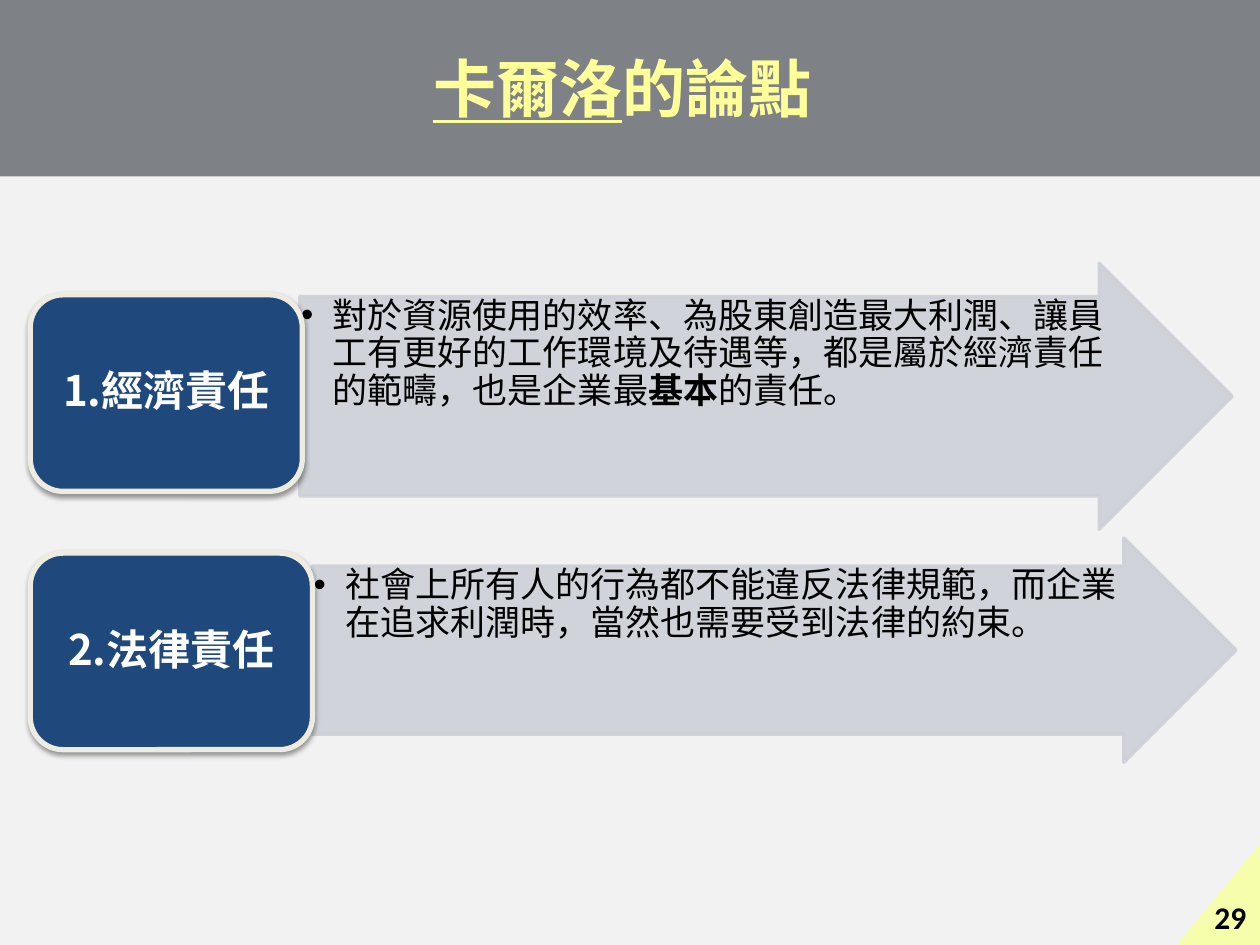
from dataclasses import dataclass

from lxml import etree
from pptx import Presentation
from pptx import util as u
from pptx.dml.color import RGBColor
from pptx.enum import shapes, text
from pptx.oxml import ns


@dataclass(frozen=True)
class Theme:
    """Colours, fonts and type sizes."""

    paper: str = "F2F2F2"
    banner: str = "0C141C"
    heading: str = "FFFF99"
    arrow: str = "CDD0D7"
    label: str = "1F497D"
    edge: str = "EEECE1"
    corner: str = "F6FEAC"
    ink: str = "000000"
    light: str = "FFFFFF"
    face: str = "Noto Sans CJK SC"
    number_face: str = "Calibri"
    title_size: int = 36
    label_size: int = 24
    body_size: int = 20
    number_size: int = 18


def child(parent, tag, **attributes):
    """Append a DrawingML element to its parent."""
    return etree.SubElement(parent, ns.qn(tag), attributes)


class SlideMaker:
    """Draws styled elements on the current slide."""

    def __init__(self, page, theme):
        self.page = page
        self.theme = theme
        page.background.fill.solid()
        page.background.fill.fore_color.rgb = RGBColor.from_string(theme.paper)

    def shape(self, kind, frame, fill, line=None, width=0, opacity=100):
        """Add a flat preset shape."""
        box = self.page.shapes.add_shape(kind, *map(u.Inches, frame))
        box.shadow.inherit = False
        box.fill.solid()
        box.fill.fore_color.rgb = RGBColor.from_string(fill)
        if line:
            box.line.color.rgb = RGBColor.from_string(line)
            box.line.width = u.Pt(width)
        else:
            box.line.fill.background()
        if opacity < 100:
            for colour in box.element.spPr.iter(ns.qn("a:srgbClr")):
                child(colour, "a:alpha", val=str(opacity * 1000))
        return box

    def words(self, box, spans, size, colour, face, bold=False, align=None, spacing=None):
        """Fill a box with one paragraph of (wording, emphasis) spans."""
        para = box.text_frame.paragraphs[0]
        para.alignment = align
        para.line_spacing = spacing
        font = para.font
        font.name, font.size, font.bold = face, u.Pt(size), bold
        font.color.rgb = RGBColor.from_string(colour)
        child(para._p.pPr.find(ns.qn("a:defRPr")), "a:ea", typeface=face)
        for wording, emphasis in spans:
            span = para.add_run()
            span.text = wording
            if emphasis == "bold":
                span.font.bold = True
            elif emphasis == "underline":
                span.font.underline = True
        return para

    def place(self, holder, frame, margins, anchor):
        """Move a placeholder to its frame, in front of what is drawn so far."""
        holder.left, holder.top, holder.width, holder.height = map(u.Inches, frame)
        frame_text = holder.text_frame
        frame_text.word_wrap = True
        frame_text.auto_size = text.MSO_AUTO_SIZE.NONE
        frame_text.vertical_anchor = anchor
        frame_text.margin_left = frame_text.margin_right = u.Inches(margins[0])
        frame_text.margin_top = frame_text.margin_bottom = u.Inches(margins[1])
        self.page.shapes._spTree.append(holder.element)

    def title(self, spans):
        """Set the title over its banner."""
        theme = self.theme
        self.shape(shapes.MSO_SHAPE.RECTANGLE, (0, 0, 10, 1.4), theme.banner, opacity=50)
        holder = self.page.shapes.title
        self.place(holder, (0.51, 0.17, 8.86, 0.87), (0.08, 0.04), text.MSO_ANCHOR.BOTTOM)
        self.words(holder, spans, theme.title_size, theme.heading, theme.face,
                   True, text.PP_ALIGN.CENTER, 0.9)

    def arrow(self, holder, frame, spans):
        """Draw a right arrow carrying a bulleted list."""
        theme = self.theme
        left, top, width, height = frame
        arrow = self.shape(shapes.MSO_SHAPE.RIGHT_ARROW, frame, theme.arrow, theme.arrow, 2, 90)
        arrow.adjustments[0], arrow.adjustments[1] = 0.75, 0.5
        inner = (left, top + height / 8, width - height * 3 / 8, height * 3 / 4)
        self.place(holder, inner, (0.01, 0.01), text.MSO_ANCHOR.TOP)
        para = self.words(holder, spans, theme.body_size, theme.ink, theme.face,
                          align=text.PP_ALIGN.LEFT, spacing=0.9)
        para.space_before = u.Pt(0)
        properties = para._p.pPr
        properties.set("marL", str(u.Inches(0.25)))
        properties.set("indent", str(u.Inches(-0.25)))
        bullet = child(properties, "a:buChar", char="•")
        properties.find(ns.qn("a:defRPr")).addprevious(bullet)

    def label(self, frame, wording):
        """Draw a rounded label with a soft shadow."""
        theme = self.theme
        box = self.shape(shapes.MSO_SHAPE.ROUNDED_RECTANGLE, frame, theme.label, theme.edge, 3)
        shadow = child(box.element.spPr.find(ns.qn("a:effectLst")), "a:outerShdw",
                       blurRad=str(u.Pt(3.1)), dist=str(u.Pt(1.6)), dir="5400000",
                       rotWithShape="0")
        child(child(shadow, "a:srgbClr", val=theme.ink), "a:alpha", val="38000")
        box.text_frame.word_wrap = True
        self.words(box, [(wording, None)], theme.label_size, theme.light, theme.face,
                   True, text.PP_ALIGN.CENTER, 0.9)

    def page_number(self, number):
        """Draw the corner triangle with the page number."""
        theme = self.theme
        corner = self.shape(shapes.MSO_SHAPE.RIGHT_TRIANGLE, (9.34, 6.7, 0.66, 0.8), theme.corner)
        corner.element.spPr.xfrm.set("flipH", "1")
        box = self.page.shapes.add_textbox(*map(u.Inches, (9.54, 7.08, 0.46, 0.4)))
        box.text_frame.word_wrap = True
        self.words(box, [(number, None)], theme.number_size, theme.ink, theme.number_face, True)


def main():
    """Build the slide and save it."""
    deck = Presentation()
    deck.slide_width, deck.slide_height = u.Inches(10), u.Inches(7.5)
    page = deck.slides.add_slide(deck.slide_layouts.get_by_name("Two Content"))
    maker = SlideMaker(page, Theme())
    duties = [
        ("1.經濟責任", (0.24, 2.34, 2.16, 1.56), (2.38, 2.09, 7.4, 2.11), [
            ("對於資源使用的效率、為股東創造最大利潤、讓員工有更好的工作環境及待遇等，"
             "都是屬於經濟責任的範疇，也是企業最", None),
            ("基本", "bold"),
            ("的責任。", None)]),
        ("2.法律責任", (0.24, 4.39, 2.24, 1.56), (2.48, 4.27, 7.33, 1.78), [
            ("社會上所有人的行為都不能違反法律規範，而企業在追求利潤時，"
             "當然也需要受到法律的約束。", None)]),
    ]
    holders = [page.placeholders[1], page.placeholders[2]]
    for holder, (name, label_frame, arrow_frame, spans) in zip(holders, duties):
        maker.arrow(holder, arrow_frame, spans)
        maker.label(label_frame, name)
    maker.title([("卡爾洛", "underline"), ("的論點", None)])
    maker.page_number("29")
    deck.save("out.pptx")


if __name__ == "__main__":
    main()
